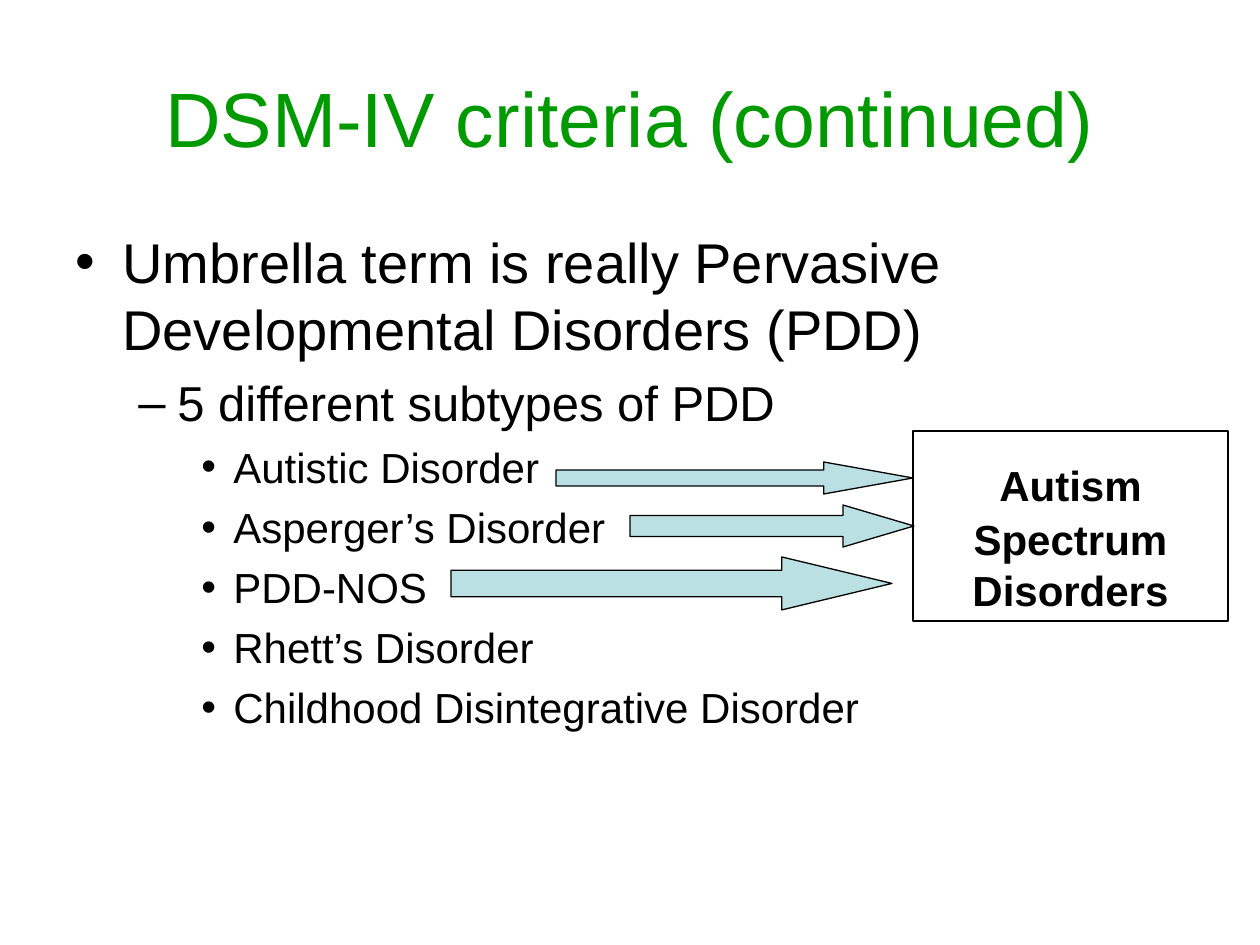
from dataclasses import dataclass

from lxml import etree
from pptx import Presentation
from pptx import util as u
from pptx.dml.color import RGBColor
from pptx.enum import shapes, text
from pptx.oxml.ns import qn


@dataclass(frozen=True)
class Theme:
    font: str = "Arial"
    ink: str = "000000"
    title: str = "009900"
    arrow: str = "BBE0E3"
    head: int = 44
    sizes: tuple = (32, 28, 24)
    label: int = 24
    gap: int = 36
    line: float = 0.75


T = Theme()
MARKS = ("•", "–", "•")
INDENTS = ((47, -47), (102, -39), (158, -32))  # left margin, first line
ITEMS = (
    (0, "Umbrella term is really Pervasive Developmental Disorders (PDD)"),
    (1, "5 different subtypes of PDD"),
    (2, "Autistic Disorder"),
    (2, "Asperger’s Disorder"),
    (2, "PDD-NOS"),
    (2, "Rhett’s Disorder"),
    (2, "Childhood Disintegrative Disorder"),
)
ARROWS = ((556, 462, 357, 32), (630, 505, 284, 42), (451, 557, 441, 53))


def px(n):
    return u.Emu(round(n * 914400 / 126))


def rgb(code):
    return RGBColor.from_string(code)


def write(par, words, size, color=T.ink, bold=False):
    run = par.add_run()
    run.text = words
    font = run.font
    font.name, font.size, font.bold = T.font, u.Pt(size), bold
    font.color.rgb = rgb(color)


def frame(shape, anchor):
    tf = shape.text_frame
    tf.word_wrap = True
    tf.vertical_anchor = anchor
    return tf


def mark(par, level):
    """Give a paragraph the bullet and hanging indent of its level."""
    left, first = INDENTS[level]
    props = par._p.get_or_add_pPr()
    props.set("marL", str(px(left)))
    props.set("indent", str(px(first)))
    etree.SubElement(props, qn("a:buFont")).set("typeface", T.font)
    etree.SubElement(props, qn("a:buChar")).set("char", MARKS[level])


def draw(slide, kind, box, fill=None):
    shape = slide.shapes.add_shape(kind, *map(px, box))
    shape.shadow.inherit = False
    if fill:
        shape.fill.solid()
        shape.fill.fore_color.rgb = rgb(fill)
    else:
        shape.fill.background()
    shape.line.color.rgb = rgb(T.ink)
    shape.line.width = u.Pt(T.line)
    return shape


def title(slide, box, words):
    area = slide.shapes.add_textbox(*map(px, box))
    par = frame(area, text.MSO_ANCHOR.MIDDLE).paragraphs[0]
    par.alignment = text.PP_ALIGN.CENTER
    write(par, words, T.head, T.title)


def outline(slide, box, items):
    area = slide.shapes.add_textbox(*map(px, box))
    tf = frame(area, text.MSO_ANCHOR.TOP)
    for i, (level, words) in enumerate(items):
        par = tf.add_paragraph() if i else tf.paragraphs[0]
        par.level = level
        mark(par, level)
        if i:
            par.space_before = u.Pt(round(T.sizes[level] * 0.23, 1))
        write(par, words, T.sizes[level])


def arrow(slide, box):
    shape = draw(slide, shapes.MSO_SHAPE.RIGHT_ARROW, box, T.arrow)
    wide, high = box[2:]
    shape.adjustments[0] = 0.5
    shape.adjustments[1] = wide / high / 4  # head takes a quarter


def label(slide, box):
    shape = draw(slide, shapes.MSO_SHAPE.RECTANGLE, box)
    par = frame(shape, text.MSO_ANCHOR.BOTTOM).paragraphs[0]
    par.alignment = text.PP_ALIGN.CENTER
    write(par, "Autism", T.label, bold=True)
    write(par, " ", T.gap, bold=True)
    write(par, "Spectrum Disorders", T.label, bold=True)


def main():
    deck = Presentation()
    deck.slide_width, deck.slide_height = px(1260), px(945)
    slide = deck.slides.add_slide(deck.slide_layouts[6])
    title(slide, (63, 38, 1134, 157), "DSM-IV criteria (continued)")
    outline(slide, (63, 221, 1134, 624), ITEMS)
    for box in ARROWS:
        arrow(slide, box)
    label(slide, (913, 431, 315, 190))
    deck.save("out.pptx")


if __name__ == "__main__":
    main()
